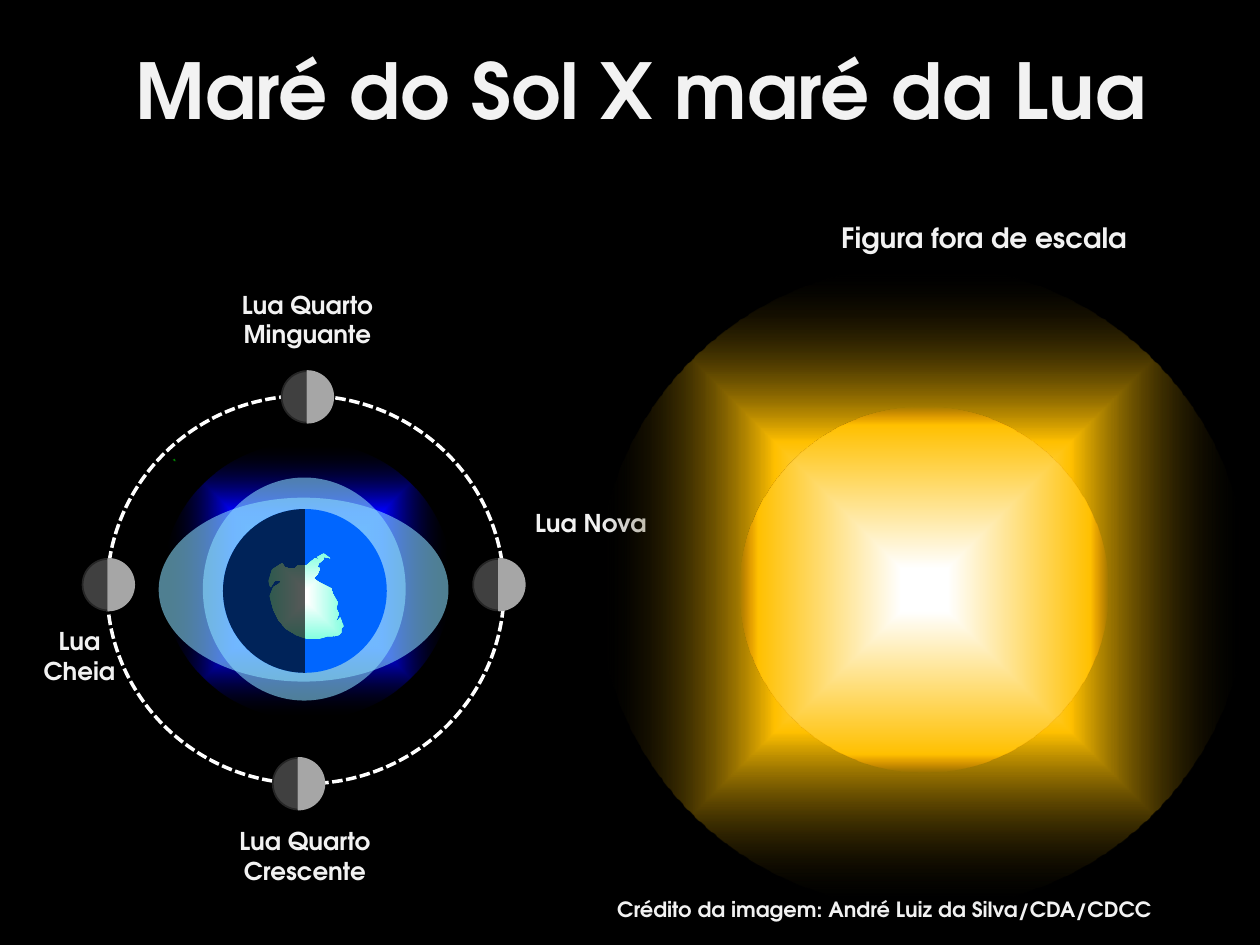
from lxml import etree
from pptx import Presentation
from pptx import util as u
from pptx.dml.color import RGBColor
from pptx.enum import dml, shapes, text
from pptx.oxml.ns import qn

FONT = "TeX Gyre Adventor"
PALE = "F2F2F2"
MOON_SIZE = 0.41
MOON_CENTRES = [(3.96, 4.64), (2.44, 3.15), (0.86, 4.64), (2.37, 6.22)]
LABELS = [
    ((1.69, 2.25, 1.5, 0.57), "Lua Quarto\nMinguante"),
    ((0.12, 4.92, 1.02, 0.57), "Lua\nCheia"),
    ((1.65, 6.51, 1.54, 0.57), "Lua Quarto\nCrescente"),
    ((4.06, 3.98, 1.26, 0.34), "Lua Nova"),
]
# Outlines are in hundredths of an inch
CONTINENT = [
    (254, 507), (260, 505), (264, 505), (269, 500), (265, 505),
    (269, 504), (271, 502), (271, 499), (273, 497), (270, 490),
    (266, 495), (269, 487), (267, 483), (268, 478), (264, 471),
    (263, 467), (253, 462), (249, 459), (252, 456), (254, 451),
    (252, 450), (253, 447), (257, 444), (257, 442), (262, 443),
    (257, 439), (252, 442), (253, 444), (250, 443), (243, 449),
    (239, 449), (236, 449), (234, 451), (229, 451), (226, 450),
    (224, 447), (216, 452), (214, 458), (213, 461), (214, 465),
    (215, 466), (218, 461), (223, 461), (222, 463), (217, 466),
    (214, 473), (217, 484), (221, 492), (227, 499), (235, 504),
    (243, 507),
]
ISLANDS = [
    [(138, 366), (140, 366), (138, 365)],
    [(137, 365), (139, 366), (139, 364)],
]


def color(value):
    return RGBColor.from_string(value)


def set_alpha(parent, percent):
    etree.SubElement(parent, qn("a:alpha")).set("val", str(percent * 1000))


def fill_solid(shape, value, alpha=100):
    shape.fill.solid()
    shape.fill.fore_color.rgb = color(value)
    if alpha < 100:
        set_alpha(shape.fill._xPr.find(".//" + qn("a:srgbClr")), alpha)


def fill_glow(shape, stops):
    """Fill from the centre outwards; stops are (percent, colour, alpha)."""
    shape.fill.solid()
    solid = shape.fill._xPr.find(qn("a:solidFill"))
    gradient = etree.Element(qn("a:gradFill"), rotWithShape="1")
    stop_list = etree.SubElement(gradient, qn("a:gsLst"))
    for percent, value, alpha in stops:
        stop = etree.SubElement(stop_list, qn("a:gs"), pos=str(percent * 1000))
        tint = etree.SubElement(stop, qn("a:srgbClr"), val=value)
        if alpha < 100:
            set_alpha(tint, alpha)
    way = etree.SubElement(gradient, qn("a:path"))
    way.set("path", "shape")
    etree.SubElement(way, qn("a:fillToRect"), l="50000", t="50000", r="50000", b="50000")
    solid.getparent().replace(solid, gradient)


def finish(shape, line=None, width=1):
    shape.shadow.inherit = False
    if line:
        shape.line.color.rgb = color(line)
        shape.line.width = u.Pt(width)
    else:
        shape.line.fill.background()
    return shape


def add_ellipse(parent, place, line=None, width=1):
    ellipse = parent.add_shape(shapes.MSO_SHAPE.OVAL, *map(u.Inches, place))
    return finish(ellipse, line, width)


def add_half_disc(parent, place, left, fill, alpha=100, line=None):
    half = parent.add_shape(shapes.MSO_SHAPE.CHORD, *map(u.Inches, place))
    # Chord angles are in 60000ths of a degree; an adjustment unit is 100000
    quarter = 54
    start, end = (quarter, 3 * quarter) if left else (3 * quarter, quarter)
    half.adjustments[0], half.adjustments[1] = start, end
    fill_solid(half, fill, alpha)
    return finish(half, line)


def add_outline(parent, points):
    builder = parent.build_freeform(*points[0], scale=u.Inches(0.01))
    builder.add_line_segments(points[1:], close=True)
    return finish(builder.convert_to_shape())


def write(box, content, size, align=text.PP_ALIGN.CENTER, wrap=True):
    frame = box.text_frame
    frame.word_wrap = wrap
    frame.auto_size = text.MSO_AUTO_SIZE.NONE
    frame.vertical_anchor = text.MSO_ANCHOR.TOP
    frame.text = content
    for para in frame.paragraphs:
        para.alignment = align
        para.font.size = u.Pt(size)
        para.font.name = FONT
        para.font.bold = True
        para.font.color.rgb = color(PALE)


def add_text(page, place, content, size, **layout):
    write(page.shapes.add_textbox(*map(u.Inches, place)), content, size, **layout)


def add_title(page, content):
    title = page.shapes.title
    title.left, title.top, title.width, title.height = map(u.Inches, (0.09, 0.29, 10, 1.25))
    write(title, content, 44)


def add_tides(page):
    glow = add_ellipse(page.shapes, (1.29, 3.51, 2.29, 2.2))
    fill_glow(glow, [(0, "0066FF", 100), (50, "0000FF", 100), (100, "000000", 0)])
    for place, turn in [((1.53, 3.87, 1.77, 1.61), 270), ((1.26, 3.95, 2.3, 1.46), 0)]:
        tide = add_ellipse(page.shapes, place)
        tide.rotation = turn
        fill_solid(tide, "8BE1FF", 57)


def add_earth(page):
    earth = page.shapes.add_group_shape().shapes
    globe = (1.77, 4.04, 1.3, 1.3)
    fill_solid(add_ellipse(earth, globe), "0066FF")
    fill_glow(add_outline(earth, CONTINENT), [(3, "FFFFFF", 100), (100, "85FFE0", 100)])
    for island in ISLANDS:
        fill_solid(add_outline(earth, island), "008000")
    add_half_disc(earth, globe, True, "000000", alpha=65)


def add_moon(page, x, y):
    moon = page.shapes.add_group_shape().shapes
    place = (x - MOON_SIZE / 2, y - MOON_SIZE / 2, MOON_SIZE, MOON_SIZE)
    add_half_disc(moon, place, True, "404040", line="262626")
    add_half_disc(moon, place, False, "A6A6A6", line="A6A6A6")


def add_orbit(page):
    orbit = add_ellipse(page.shapes, (0.85, 3.14, 3.15, 3.08), "FFFFFF", 2)
    orbit.fill.background()
    orbit.line.dash_style = dml.MSO_LINE.SQUARE_DOT
    for x, y in MOON_CENTRES:
        add_moon(page, x, y)


def add_sun(page):
    sun = page.shapes.add_group_shape().shapes
    fill_glow(add_ellipse(sun, (4.74, 2.1, 5.16, 5.11)),
              [(7, "FFFFFF", 100), (45, "FFC000", 100), (100, "000000", 0)])
    fill_glow(add_ellipse(sun, (5.87, 3.23, 2.93, 2.9)),
              [(12, "FFFFFF", 100), (90, "FFC000", 100), (100, "EE8800", 0)])


def main():
    deck = Presentation()
    deck.slide_width, deck.slide_height = u.Inches(10), u.Inches(7.5)
    page = deck.slides.add_slide(deck.slide_layouts.get_by_name("Title Only"))
    page.background.fill.solid()
    page.background.fill.fore_color.rgb = color("000000")
    add_tides(page)
    add_earth(page)
    add_title(page, "Maré do Sol X maré da Lua")
    add_orbit(page)
    for place, content in LABELS:
        add_text(page, place, content, 14)
    add_text(page, (4.8, 7.07, 5.28, 0.3), "Crédito da imagem: André Luiz da Silva/CDA/CDCC", 12,
             align=text.PP_ALIGN.LEFT)
    add_text(page, (6.55, 1.7, 2.52, 0.37), "Figura fora de escala", 16, wrap=False)
    add_sun(page)
    deck.save("out.pptx")


if __name__ == "__main__":
    main()
